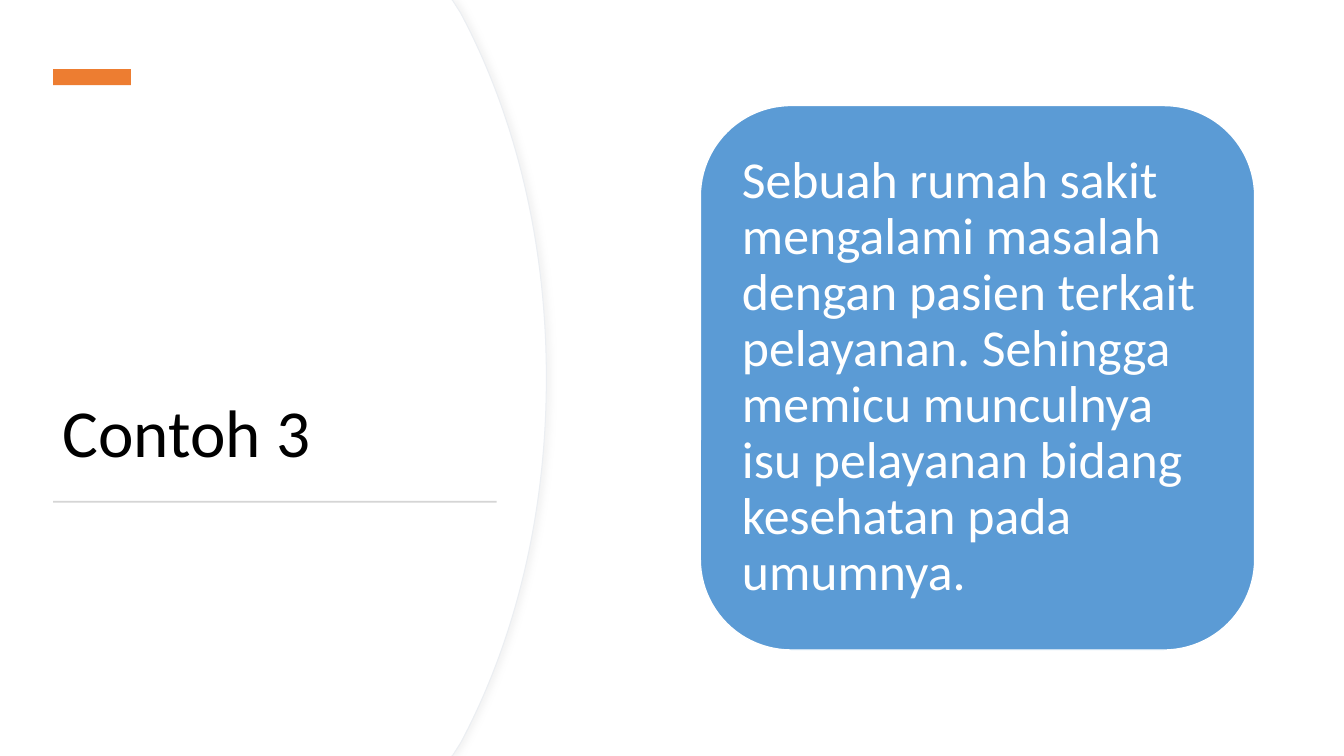
from dataclasses import dataclass

from lxml.etree import SubElement
from pptx import Presentation
from pptx.dml.color import RGBColor
from pptx.enum.shapes import MSO_SHAPE
from pptx.enum.text import MSO_ANCHOR, MSO_AUTO_SIZE, PP_ALIGN
from pptx.oxml.ns import qn
from pptx.shapes.autoshape import Shape
from pptx.slide import Slide
from pptx.text.text import TextFrame
from pptx.util import Cm, Pt

PAGE_WIDTH, PAGE_HEIGHT = 33.87, 19.05
FONT = "Calibri"


@dataclass
class Block:
    kind: MSO_SHAPE
    left: float
    top: float
    width: float
    height: float
    fill: str
    line: str = ""


@dataclass
class Panel:
    shift: float
    line: str = ""
    shadow: str = ""


ACCENT = Block(MSO_SHAPE.RECTANGLE, 1.34, 1.74, 1.96, 0.41, "ED7D31")
RULE = Block(MSO_SHAPE.RECTANGLE, 1.34, 12.62, 11.18, 0.05, "D5D5D5")
CARD = Block(MSO_SHAPE.ROUNDED_RECTANGLE, 17.65, 2.66, 13.97, 13.72, "5B9BD5", "FFFFFF")
PANELS = [Panel(0, "EBEEF2", "D9D9D9"), Panel(-0.03)]
UPPER_EDGE = [(11.4, 0), (11.61, 0.33), (12.98, 2.9), (13.77, 6.07)]
STORY = (
    "Sebuah rumah sakit mengalami masalah dengan pasien terkait pelayanan. "
    "Sehingga memicu munculnya isu pelayanan bidang kesehatan pada umumnya."
)


def color(value: str) -> RGBColor:
    return RGBColor.from_string(value)


def paint(shape: Shape, fill: str, line: str, width: float) -> None:
    shape.shadow.inherit = False
    shape.fill.solid()
    shape.fill.fore_color.rgb = color(fill)
    if line:
        shape.line.color.rgb = color(line)
        shape.line.width = Pt(width)
    else:
        shape.line.fill.background()


def draw_block(page: Slide, block: Block) -> Shape:
    shape = page.shapes.add_shape(
        block.kind, Cm(block.left), Cm(block.top), Cm(block.width), Cm(block.height)
    )
    paint(shape, block.fill, block.line, 1)
    return shape


def panel_outline(shift: float) -> list[tuple[int, int]]:
    middle = (UPPER_EDGE[-1][0], PAGE_HEIGHT / 2)
    lower = [(x, PAGE_HEIGHT - y) for x, y in reversed(UPPER_EDGE)]
    edge = [(Cm(x + shift), Cm(y)) for x, y in [*UPPER_EDGE, middle, *lower]]
    return edge + [(Cm(0), Cm(PAGE_HEIGHT))]


def bend_edge(shape: Shape) -> None:
    lines = list(shape.element.iter(qn("a:lnTo")))
    for first in (2, 5):
        group = lines[first:first + 3]
        outline = group[0].getparent()
        curve = SubElement(outline, qn("a:cubicBezTo"))
        group[0].addprevious(curve)
        for line in group:
            curve.append(line[0])
            outline.remove(line)


def add_shadow(shape: Shape, value: str) -> None:
    effects = shape.element.spPr.find(qn("a:effectLst"))
    shadow = SubElement(effects, qn("a:outerShdw"), blurRad=str(Pt(4)),
                        dist=str(Pt(3)), dir="0", algn="l", rotWithShape="0")
    tint = SubElement(shadow, qn("a:srgbClr"), val=value)
    SubElement(tint, qn("a:alpha"), val="30000")


def draw_panel(page: Slide, panel: Panel) -> None:
    builder = page.shapes.build_freeform(0, 0)
    builder.add_line_segments(panel_outline(panel.shift), close=True)
    shape = builder.convert_to_shape()
    bend_edge(shape)
    paint(shape, "FFFFFF", panel.line, 0.75)
    if panel.shadow:
        add_shadow(shape, panel.shadow)


def write(frame: TextFrame, text: str, size: int, value: str, anchor: MSO_ANCHOR) -> None:
    frame.word_wrap = True
    frame.auto_size = MSO_AUTO_SIZE.NONE
    frame.vertical_anchor = anchor
    para = frame.paragraphs[0]
    para.alignment = PP_ALIGN.LEFT
    para.line_spacing = 0.9
    span = para.add_run()
    span.text = text
    span.font.name = FONT
    span.font.size = Pt(size)
    span.font.color.rgb = color(value)


def place_title(page: Slide) -> None:
    title = page.shapes.title
    title.left, title.top = Cm(1.32), Cm(3.12)
    title.width, title.height = Cm(11.18), Cm(8.89)
    write(title.text_frame, "Contoh 3", 48, "000000", MSO_ANCHOR.BOTTOM)
    title.element.getparent().append(title.element)


def draw_card(page: Slide) -> None:
    frame = draw_block(page, CARD).text_frame
    frame.margin_left = frame.margin_right = Cm(0.38)
    frame.margin_top = frame.margin_bottom = Cm(0.38)
    write(frame, STORY, 37, "FFFFFF", MSO_ANCHOR.MIDDLE)


def main() -> None:
    deck = Presentation()
    deck.slide_width, deck.slide_height = Cm(PAGE_WIDTH), Cm(PAGE_HEIGHT)
    page = deck.slides.add_slide(deck.slide_layouts.get_by_name("Title Only"))
    for panel in PANELS:
        draw_panel(page, panel)
    place_title(page)
    for block in (ACCENT, RULE):
        draw_block(page, block)
    draw_card(page)
    deck.save("out.pptx")


if __name__ == "__main__":
    main()
